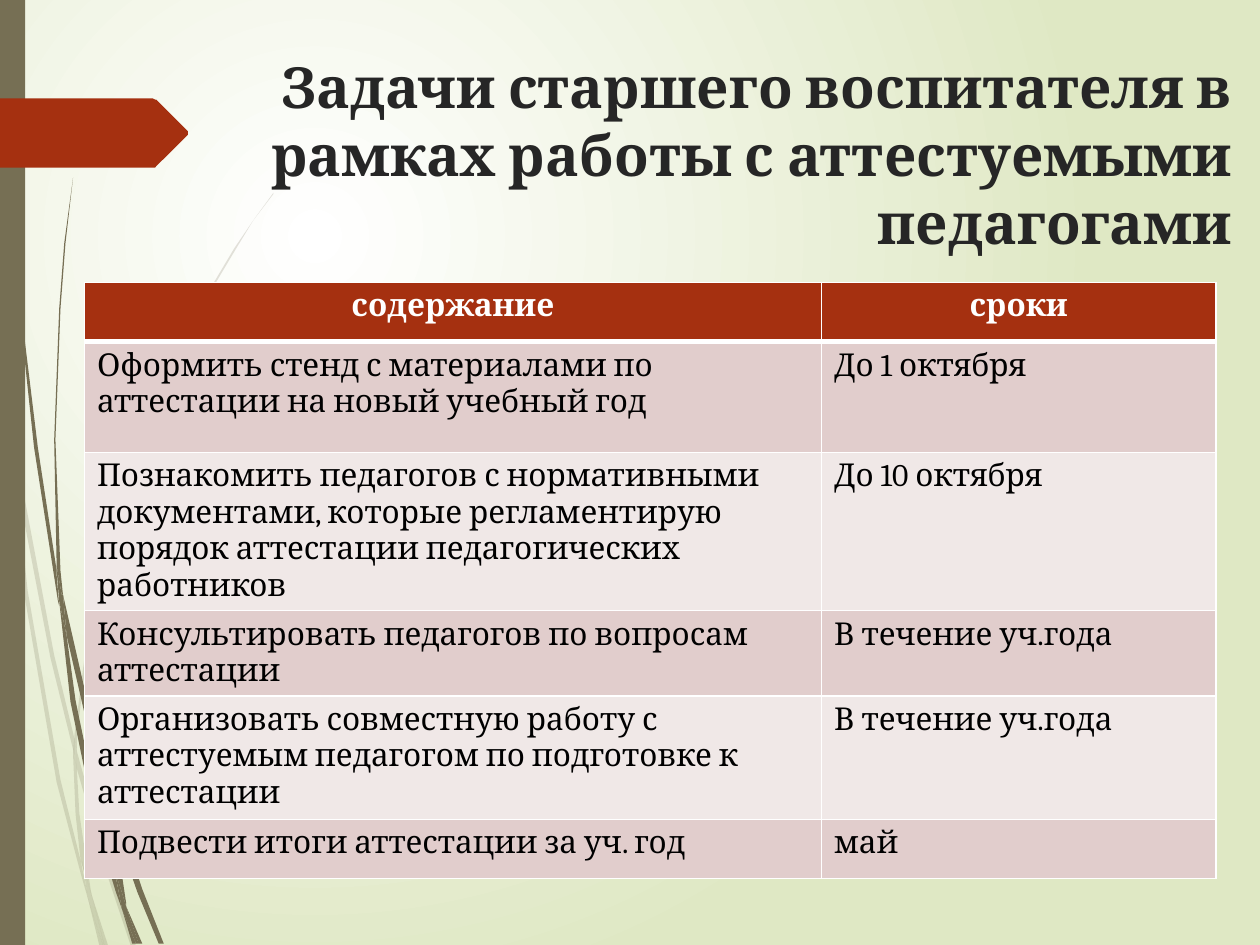
import pptx
import pptx.dml.color
import pptx.enum.shapes
import pptx.enum.text
import pptx.oxml.ns
import pptx.util

PX = 9144  # one px is a hundredth of an inch
FONT = "Cambria"
OLIVE, RUST, WHITE, BLACK = "766F54", "A53010", "FFFFFF", "000000"
ALIGN = pptx.enum.text.PP_ALIGN

# Outlines of the grass blades, each a ring of points
PALE_BLADES = [
    [(8, 350), (6, 322), (0, 282), (0, 299), (7, 344)],
    [(40, 522), (59, 599), (59, 586), (43, 520), (10, 345), (12, 376)],
    [(64, 607), (61, 596), (61, 610), (85, 694), (104, 751), (108, 751), (88, 692)],
    [(83, 751), (86, 751), (73, 711)],
    [(64, 683), (48, 619), (22, 469), (12, 376), (8, 350), (19, 470), (45, 621),
     (64, 693), (70, 714), (69, 707)],
    [(58, 599), (60, 646), (64, 683), (67, 692), (73, 711), (72, 706), (63, 646),
     (61, 610), (61, 608)],
    [(61, 584), (76, 462), (111, 349), (159, 245), (187, 198), (201, 175), (217, 154),
     (217, 153), (201, 175), (186, 197), (158, 244), (110, 348), (75, 461), (59, 584),
     (59, 586), (61, 596)],
    [(70, 714), (79, 751), (82, 751)],
    [(61, 608), (61, 610), (61, 596), (59, 586), (58, 599)],
    [(67, 692), (65, 683), (69, 707), (70, 714), (82, 751), (83, 751), (73, 711)],
]
DARK_BLADES = [
    [(5, 110), (14, 233), (27, 355), (46, 477), (47, 481), (45, 457), (45, 453),
     (30, 355), (15, 232), (6, 109), (4, 48), (3, 0), (2, 0), (3, 48)],
    [(73, 592), (88, 645), (88, 633), (88, 631), (77, 590), (50, 472), (53, 505)],
    [(94, 649), (91, 641), (91, 656), (109, 708), (126, 749), (130, 749), (113, 706)],
    [(91, 691), (81, 657), (60, 556), (53, 505), (47, 477), (56, 557), (77, 659),
     (92, 708), (97, 722), (96, 717)],
    [(50, 472), (48, 453), (44, 349), (48, 245), (52, 193), (58, 141), (51, 193),
     (47, 245), (43, 349), (45, 449), (49, 472)],
    [(110, 749), (113, 749), (100, 719)],
    [(47, 477), (53, 505), (50, 472), (49, 472), (45, 449), (45, 453)],
    [(91, 633), (103, 552), (131, 476), (169, 406), (191, 374), (203, 359), (216, 344),
     (215, 344), (203, 358), (191, 373), (168, 405), (129, 474), (101, 551), (88, 631),
     (91, 641)],
    [(97, 722), (105, 749), (108, 749)],
    [(88, 645), (91, 691), (96, 706), (100, 719), (100, 716), (91, 656), (90, 651)],
    [(88, 645), (90, 651), (91, 656), (91, 641), (88, 631), (88, 633)],
    [(96, 706), (91, 691), (96, 717), (97, 722), (108, 749), (110, 749), (100, 719)],
]
ARROW = [(149, 107), (124, 132), (123, 133), (121, 133), (0, 133), (0, 78), (121, 78),
         (123, 79), (124, 79), (149, 104)]

TITLE = "Задачи старшего воспитателя в рамках работы с аттестуемыми педагогами"
COLUMNS = [585, 313]
ROWS = [  # height, task, time
    (47, "содержание", "сроки"),
    (88, "Оформить стенд с материалами по аттестации на новый учебный год", "До 1 октября"),
    (125, "Познакомить педагогов с нормативными документами, которые регламентирую "
          "порядок аттестации педагогических работников", "До 10 октября"),
    (67, "Консультировать педагогов по вопросам аттестации", "В течение уч.года"),
    (98, "Организовать совместную работу с аттестуемым педагогом по подготовке к аттестации",
     "В течение уч.года"),
    (47, "Подвести итоги аттестации за уч. год", "май"),
]


def color(value):
    return pptx.dml.color.RGBColor.from_string(value)


def add_element(parent, tag, **attributes):
    child = parent.makeelement(pptx.oxml.ns.qn(tag), attributes)
    parent.append(child)
    return child


class SlideBuilder:
    def __init__(self, slide):
        self.slide = slide

    def background(self, inner, outer):
        fill = self.slide.background.fill
        fill.gradient()
        for stop, value in zip(fill.gradient_stops, (inner, outer)):
            stop.color.rgb = color(value)
        gradient = next(self.slide._element.iter(pptx.oxml.ns.qn("a:gradFill")))
        gradient.remove(gradient.find(pptx.oxml.ns.qn("a:lin")))
        circle = add_element(gradient, "a:path", path="circle")
        add_element(circle, "a:fillToRect", l="50000", t="50000", r="100000", b="100000")

    def paint(self, shape, fill, opacity=100):
        shape.shadow.inherit = False
        shape.line.fill.background()
        shape.fill.solid()
        shape.fill.fore_color.rgb = color(fill)
        if opacity < 100:
            rgb = next(shape._element.spPr.iter(pptx.oxml.ns.qn("a:srgbClr")))
            add_element(rgb, "a:alpha", val=str(opacity * 1000))

    def outline(self, points, fill, opacity=100, shapes=None):
        shapes = self.slide.shapes if shapes is None else shapes
        builder = shapes.build_freeform(*points[0], scale=PX)
        builder.add_line_segments(points[1:], close=True)
        self.paint(builder.convert_to_shape(), fill, opacity)

    def blades(self, outlines, fill, opacity=100):
        group = self.slide.shapes.add_group_shape()
        for points in outlines:
            self.outline(points, fill, opacity, group.shapes)

    def bar(self, left, top, width, height, fill):
        rectangle = pptx.enum.shapes.MSO_SHAPE.RECTANGLE
        shape = self.slide.shapes.add_shape(
            rectangle, left * PX, top * PX, width * PX, height * PX)
        self.paint(shape, fill)

    def add_text(self, frame, text, size, value, bold, align):
        paragraph = frame.paragraphs[0]
        paragraph.alignment = align
        run = paragraph.add_run()
        run.text = text
        run.font.name, run.font.size, run.font.bold = FONT, pptx.util.Pt(size), bold
        run.font.color.rgb = color(value)

    def title(self, left, top, width, height, text):
        shape = self.slide.shapes.title
        shape.left, shape.top = left * PX, top * PX
        shape.width, shape.height = width * PX, height * PX
        frame = shape.text_frame
        frame.word_wrap = True
        frame.auto_size = pptx.enum.text.MSO_AUTO_SIZE.NONE
        frame.vertical_anchor = pptx.enum.text.MSO_ANCHOR.TOP
        self.add_text(frame, text, 32.4, "262626", True, ALIGN.RIGHT)
        # Bring the title in front of the decoration
        self.slide.shapes._spTree.append(shape._element)

    def borders(self, cell, header, below_header):
        properties = cell._tc.get_or_add_tcPr()
        widths = {"L": 1, "R": 1, "T": 3 if below_header else 1, "B": 3 if header else 1}
        for side, width in widths.items():
            line = add_element(properties, "a:ln" + side, w=str(int(pptx.util.Pt(width))))
            add_element(add_element(line, "a:solidFill"), "a:srgbClr", val=WHITE)

    def table(self, left, top, columns, rows):
        height = sum(row[0] for row in rows)
        table = self.slide.shapes.add_table(
            len(rows), len(columns), left * PX, top * PX, sum(columns) * PX, height * PX).table
        for column, width in zip(table.columns, columns):
            column.width = width * PX
        for index, (row_height, *texts) in enumerate(rows):
            table.rows[index].height = row_height * PX
            header = index == 0
            fill = RUST if header else ("F0E8E7", "E1CDCC")[index % 2]
            for cell, text in zip(table.rows[index].cells, texts):
                self.borders(cell, header, index == 1)
                cell.fill.solid()
                cell.fill.fore_color.rgb = color(fill)
                self.add_text(cell.text_frame, text, 18, WHITE if header else BLACK,
                              header, ALIGN.CENTER if header else ALIGN.LEFT)


def main():
    presentation = pptx.Presentation()
    presentation.slide_width, presentation.slide_height = 1000 * PX, 750 * PX
    builder = SlideBuilder(presentation.slides.add_slide(presentation.slide_layouts[5]))

    # Background and decoration
    builder.background(WHITE, "DFE8C4")
    builder.blades(PALE_BLADES, OLIVE, 20)
    builder.blades(DARK_BLADES, OLIVE)
    builder.bar(0, 0, 20, 750, OLIVE)
    builder.outline(ARROW, RUST)

    # Title and task table
    builder.title(114, 36, 874, 140, TITLE)
    builder.table(67, 224, COLUMNS, ROWS)
    presentation.save("out.pptx")


if __name__ == "__main__":
    main()
